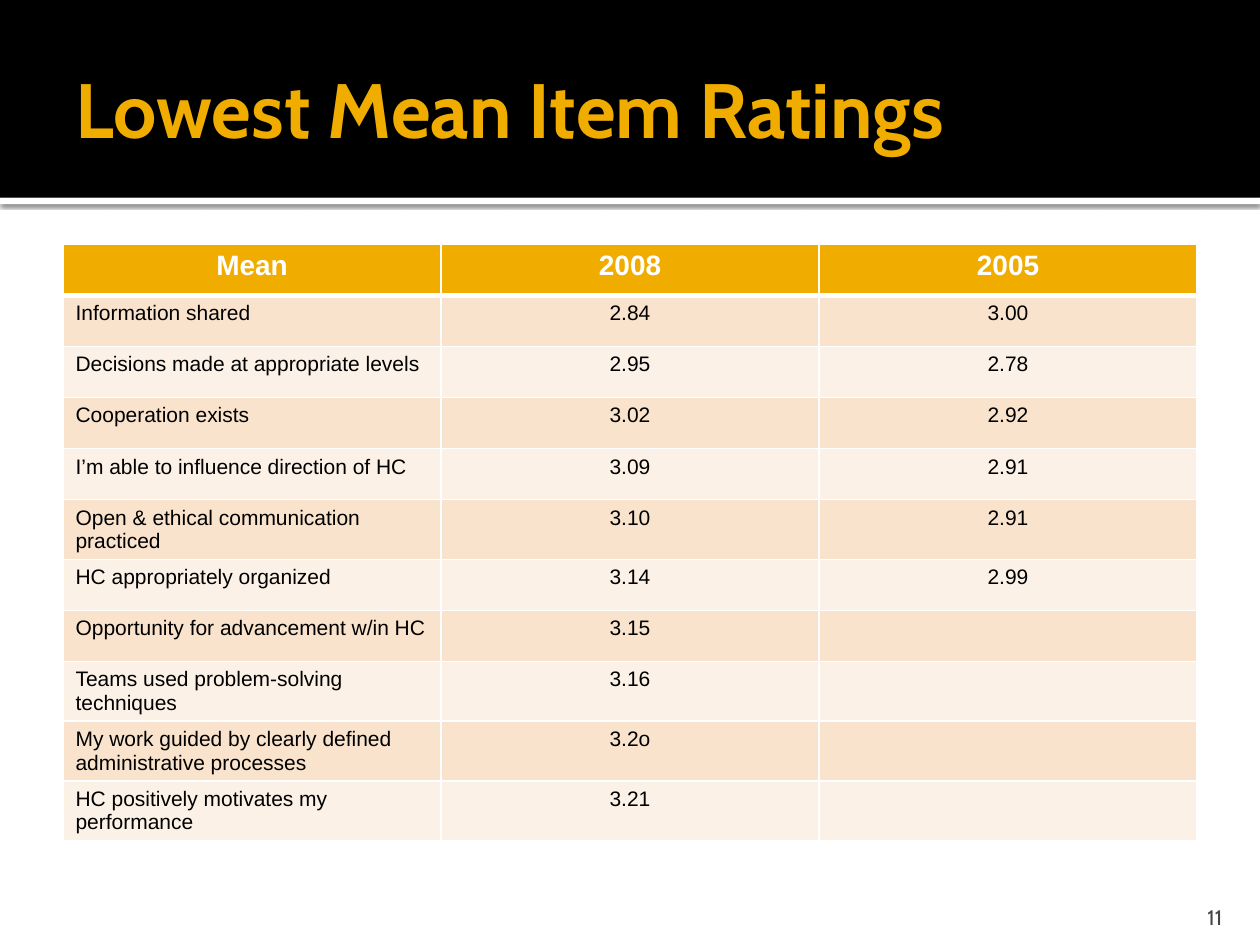
from dataclasses import dataclass

from lxml.etree import SubElement
from pptx import Presentation
from pptx.dml.color import RGBColor
from pptx.enum.shapes import MSO_SHAPE
from pptx.enum.text import MSO_ANCHOR as ANCHOR, MSO_AUTO_SIZE, PP_ALIGN as ALIGN
from pptx.oxml import parse_xml
from pptx.oxml.ns import nsdecls, qn
from pptx.util import Inches, Pt


@dataclass(frozen=True)
class Theme:
    band: str = "000000"
    paper: str = "FFFFFF"
    accent: str = "F0AD00"
    stripes: tuple = ("F9E3CC", "FCF1E7")
    ink: str = "000000"
    muted: str = "454545"
    heading_font: str = "Cabin"
    body_font: str = "Arial"
    title_size: int = 44
    header_size: int = 16
    body_size: int = 12


HEADERS = ("Mean", "2008", "2005")
RATINGS = (
    ("Information shared", "2.84", "3.00"),
    ("Decisions made at appropriate levels", "2.95", "2.78"),
    ("Cooperation exists", "3.02", "2.92"),
    ("I’m able to influence direction of HC", "3.09", "2.91"),
    ("Open & ethical communication practiced", "3.10", "2.91"),
    ("HC appropriately organized", "3.14", "2.99"),
    ("Opportunity for advancement w/in HC", "3.15", ""),
    ("Teams used problem-solving techniques", "3.16", ""),
    ("My work guided by clearly defined administrative processes", "3.2o", ""),
    ("HC positively motivates my performance", "3.21", ""),
)


def rgb(color):
    return RGBColor.from_string(color)


class SlideBuilder:
    """Places elements by shares of the slide's width and height."""

    def __init__(self, prs, theme):
        self.prs, self.theme = prs, theme
        self.slide = prs.slides.add_slide(prs.slide_layouts[5])
        self.shapes = self.slide.shapes

    def box(self, left, top, width, height):
        w, h = self.prs.slide_width, self.prs.slide_height
        return [round(v) for v in (left * w, top * h, width * w, height * h)]

    def set_text(self, tf, text, align=ALIGN.LEFT, **font):
        p = tf.paragraphs[0]
        p.alignment = align
        if text:
            r = p.add_run()
            r.text = text
            r.font.color.rgb = rgb(font.pop("color"))
            for name, value in font.items():
                setattr(r.font, name, value)

    def frame(self, tf, anchor, left, top, right, bottom):
        values = dict(word_wrap=True, auto_size=MSO_AUTO_SIZE.NONE,
                      vertical_anchor=anchor,
                      margin_left=Inches(left), margin_top=Inches(top),
                      margin_right=Inches(right), margin_bottom=Inches(bottom))
        for name, value in values.items():
            setattr(tf, name, value)

    def band(self, area, color, shadow=False):
        sp = self.shapes.add_shape(MSO_SHAPE.RECTANGLE, *self.box(*area))
        sp.fill.solid()
        sp.fill.fore_color.rgb = rgb(color)
        sp.line.fill.background()
        sp.shadow.inherit = False
        if shadow:
            effects = sp._element.spPr.find(qn("a:effectLst"))
            effects.append(parse_xml(
                f'<a:outerShdw {nsdecls("a")} blurRad="{Pt(2.5)}" dist="{Pt(0.8)}" '
                'dir="5400000" algn="tl" rotWithShape="0"><a:srgbClr val="000000">'
                '<a:alpha val="60000"/></a:srgbClr></a:outerShdw>'))

    def title(self, area, text):
        t, sp = self.theme, self.shapes.title
        sp.left, sp.top, sp.width, sp.height = self.box(*area)
        self.frame(sp.text_frame, ANCHOR.MIDDLE, 0.1, 0.05, 0.05, 0.05)
        self.set_text(sp.text_frame, text, name=t.heading_font, bold=True,
                      size=Pt(t.title_size), color=t.accent)
        # The placeholder comes first in the tree; bring it in front of the bands.
        self.shapes._spTree.append(sp._element)

    def page_number(self, area, text):
        t, sp = self.theme, self.shapes.add_textbox(*self.box(*area))
        self.frame(sp.text_frame, ANCHOR.BOTTOM, 0.1, 0.05, 0.1, 0)
        self.set_text(sp.text_frame, text, ALIGN.RIGHT, name=t.heading_font,
                      size=Pt(t.body_size), color=t.muted)

    def borders(self, cell, top=1, bottom=1):
        tc_pr = cell._tc.get_or_add_tcPr()
        for i, (side, width) in enumerate(
                dict(lnL=1, lnR=1, lnT=top, lnB=bottom).items()):
            ln = SubElement(tc_pr, qn(f"a:{side}"), w=str(Pt(width)))
            SubElement(SubElement(ln, qn("a:solidFill")), qn("a:srgbClr"),
                       val=self.theme.paper)
            tc_pr.insert(i, ln)

    def table(self, area, headers, body):
        t, rows = self.theme, (headers, *body)
        table = self.shapes.add_table(
            len(rows), len(headers), *self.box(*area)).table
        for i, row in enumerate(rows):
            is_header = i == 0
            fill = t.accent if is_header else t.stripes[(i - 1) % 2]
            font = dict(name=t.body_font, bold=is_header,
                        size=Pt(t.header_size if is_header else t.body_size),
                        color=t.paper if is_header else t.ink)
            for j, text in enumerate(row):
                cell = table.cell(i, j)
                cell.fill.solid()
                cell.fill.fore_color.rgb = rgb(fill)
                self.borders(cell, top=3 if i == 1 else 1,
                             bottom=3 if is_header else 1)
                align = ALIGN.CENTER if is_header or j else ALIGN.LEFT
                self.set_text(cell.text_frame, text, align, **font)


def main():
    prs = Presentation()
    prs.slide_width, prs.slide_height = Inches(10), Inches(7.5)
    theme = Theme()
    s = SlideBuilder(prs, theme)
    band_height = 1.57 / 7.5
    s.band((0, band_height, 1, 0.05 / 7.5), theme.paper, shadow=True)
    s.band((0, 0, 1, band_height), theme.band)
    s.title((0.05, 0.17 / 7.5, 0.9, 1.37 / 7.5), "Lowest Mean Item Ratings")
    s.table((0.05, 1.94 / 7.5, 0.9, 4.46 / 7.5), HEADERS, RATINGS)
    s.page_number((0.9, 7.08 / 7.5, 0.08, 0.04), "11")
    prs.save("out.pptx")


if __name__ == "__main__":
    main()
